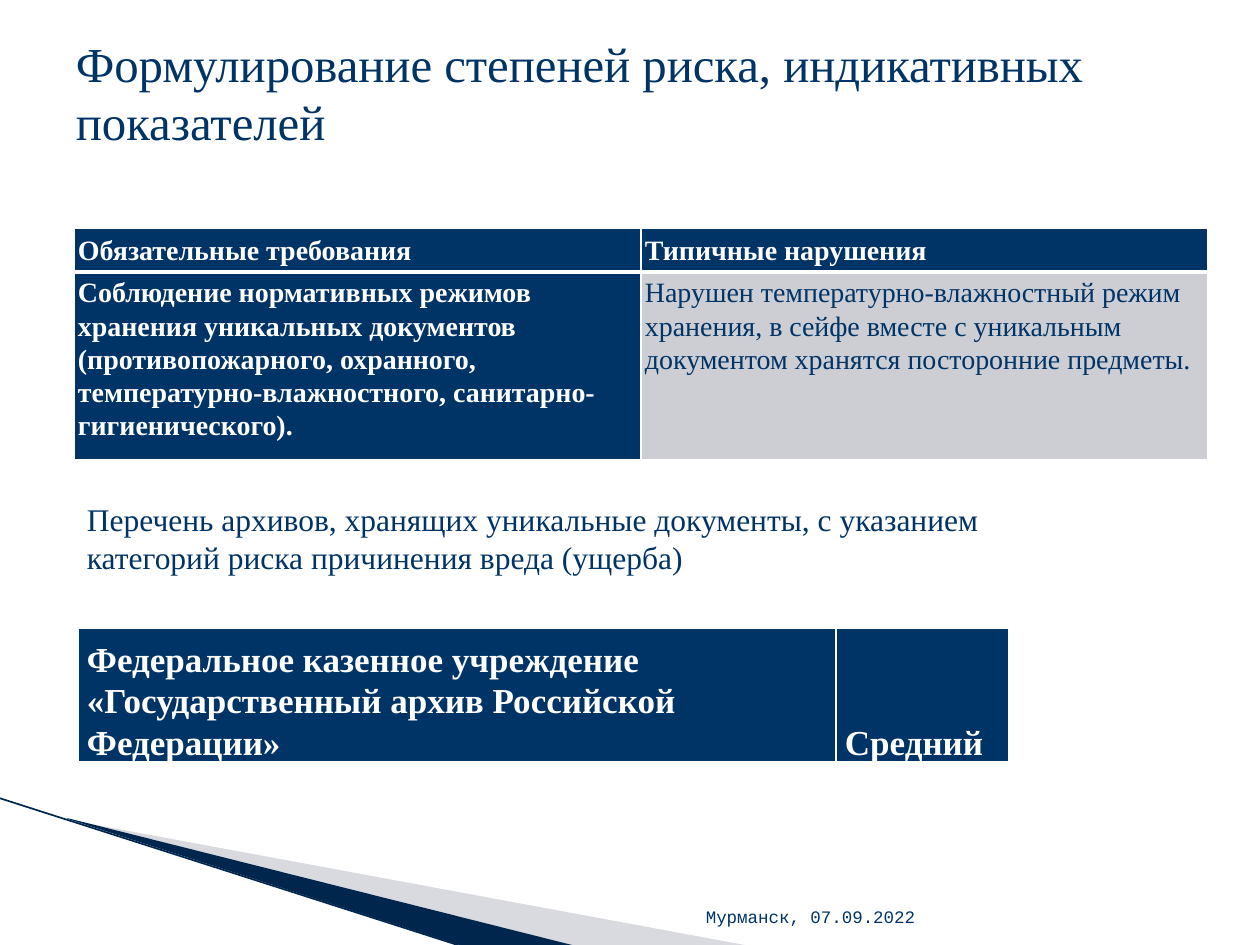
from lxml import etree
from pptx import Presentation, util as u
from pptx.dml.color import RGBColor
from pptx.enum import shapes, text
from pptx.oxml.ns import qn

SCALE = 914400 / 126
NAVY, DARK, GREY, PALE, WHITE = "003366", "00264D", "A0A4B2", "CCCED3", "FFFFFF"
SERIF = "Times New Roman"
TOP, MID, LOW = (text.MSO_ANCHOR.TOP, text.MSO_ANCHOR.MIDDLE,
                 text.MSO_ANCHOR.BOTTOM)


def px(n):
    return u.Emu(round(n * SCALE))


def rgb(code):
    return RGBColor.from_string(code)


def write(par, words, size, color=NAVY, bold=False, face=SERIF):
    run = par.add_run()
    run.text = words
    font = run.font
    font.name, font.size, font.bold = face, u.Pt(size), bold
    font.color.rgb = rgb(color)


def label(slide, box, lines, size, anchor, face=SERIF, align=None, pad=(6, 6)):
    """Add a text box; pad is its top and bottom inset."""
    frame = slide.shapes.add_textbox(*map(px, box)).text_frame
    frame.word_wrap = True
    frame.vertical_anchor = anchor
    frame.margin_left = frame.margin_right = px(13)
    frame.margin_top, frame.margin_bottom = map(px, pad)
    for i, line in enumerate(lines):
        par = frame.add_paragraph() if i else frame.paragraphs[0]
        par.alignment = align
        write(par, line, size, face=face)


def wedge(slide, points, color, alpha=100):
    draw = slide.shapes.build_freeform(*points[0], scale=SCALE)
    draw.add_line_segments(points[1:], close=True)
    shape = draw.convert_to_shape()
    shape.shadow.inherit = False
    shape.line.fill.background()
    shape.fill.solid()
    shape.fill.fore_color.rgb = rgb(color)
    if alpha < 100:
        tint = shape.fill._xPr.find(".//" + qn("a:srgbClr"))
        etree.SubElement(tint, qn("a:alpha"), val=str(alpha * 1000))


def stroke(slide, start, end, color, width):
    line = slide.shapes.add_connector(
        shapes.MSO_CONNECTOR.STRAIGHT, *map(px, start + end))
    line.line.color.rgb = rgb(color)
    line.line.width = u.Pt(width)
    etree.SubElement(line._element.spPr, qn("a:effectLst"))


def edge(cell, low):
    """Draw white cell borders, with the bottom one low points wide."""
    props = cell._tc.get_or_add_tcPr()
    for side, width in zip("LRTB", (1, 1, 1, low)):
        ln = etree.SubElement(props, qn("a:ln" + side), w=str(u.Pt(width)))
        fill = etree.SubElement(ln, qn("a:solidFill"))
        etree.SubElement(fill, qn("a:srgbClr"), val=WHITE)


def grid(slide, spot, cols, rows, cells, size, pad, after=0):
    """Add a table; cells holds rows of (words, fill, anchor, low edge)."""
    frame = slide.shapes.add_table(
        len(rows), len(cols), *map(px, spot + (sum(cols), sum(rows))))
    table = frame.table
    table.horz_banding = False
    for col, width in zip(table.columns, cols):
        col.width = px(width)
    for row, height, line in zip(table.rows, rows, cells):
        row.height = px(height)
        for cell, (words, fill, anchor, low) in zip(row.cells, line):
            edge(cell, low)
            cell.fill.solid()
            cell.fill.fore_color.rgb = rgb(fill)
            cell.vertical_anchor = anchor
            cell.margin_left = cell.margin_right = px(pad[0])
            cell.margin_top = cell.margin_bottom = px(pad[1])
            par = cell.text_frame.paragraphs[0]
            par.line_spacing = 1.07
            par.space_after = u.Pt(after)
            dark = fill == NAVY
            write(par, words, size, WHITE if dark else NAVY, dark)


def main():
    deck = Presentation()
    deck.slide_width, deck.slide_height = px(1260), px(945)
    slide = deck.slides.add_slide(deck.slide_layouts[6])

    wedge(slide, [(69, 820), (750, 946), (575, 946), (69, 819)], GREY, 40)
    wedge(slide, [(67, 818), (576, 946), (469, 948), (68, 819)], DARK)
    stroke(slide, (-1, 798), (467, 948), DARK, 0.95)

    label(slide, (604, 883, 324, 50), ["Мурманск, 07.09.2022"], 10, LOW,
          "Courier New", text.PP_ALIGN.RIGHT)
    label(slide, (63, 55, 1134, 140),
          ["Формулирование степеней риска, индикативных показателей"],
          27.9, MID, pad=(0, 66))

    grid(slide, (74, 228), (567, 567), (40, 174), [
        [("Обязательные требования", NAVY, MID, 3),
         ("Типичные нарушения", NAVY, MID, 3)],
        [("Соблюдение нормативных режимов хранения уникальных документов "
          "(противопожарного, охранного, температурно-влажностного, "
          "санитарно-гигиенического).", NAVY, TOP, 1),
         ("Нарушен температурно-влажностный режим хранения, в сейфе вместе "
          "с уникальным документом хранятся посторонние предметы.",
          PALE, TOP, 1)],
    ], 16, (4, 4), 8)

    grid(slide, (78, 628), (758, 173), (124,), [
        [("Федеральное казенное учреждение «Государственный архив "
          "Российской Федерации»", NAVY, LOW, 3),
         ("Средний", NAVY, LOW, 3)],
    ], 20, (9, 0))

    label(slide, (74, 493, 934, 127),
          ["Перечень архивов, хранящих уникальные документы, с указанием",
           "категорий риска причинения вреда (ущерба)"], 18, TOP, pad=(7, 6))
    deck.save("out.pptx")


if __name__ == "__main__":
    main()
